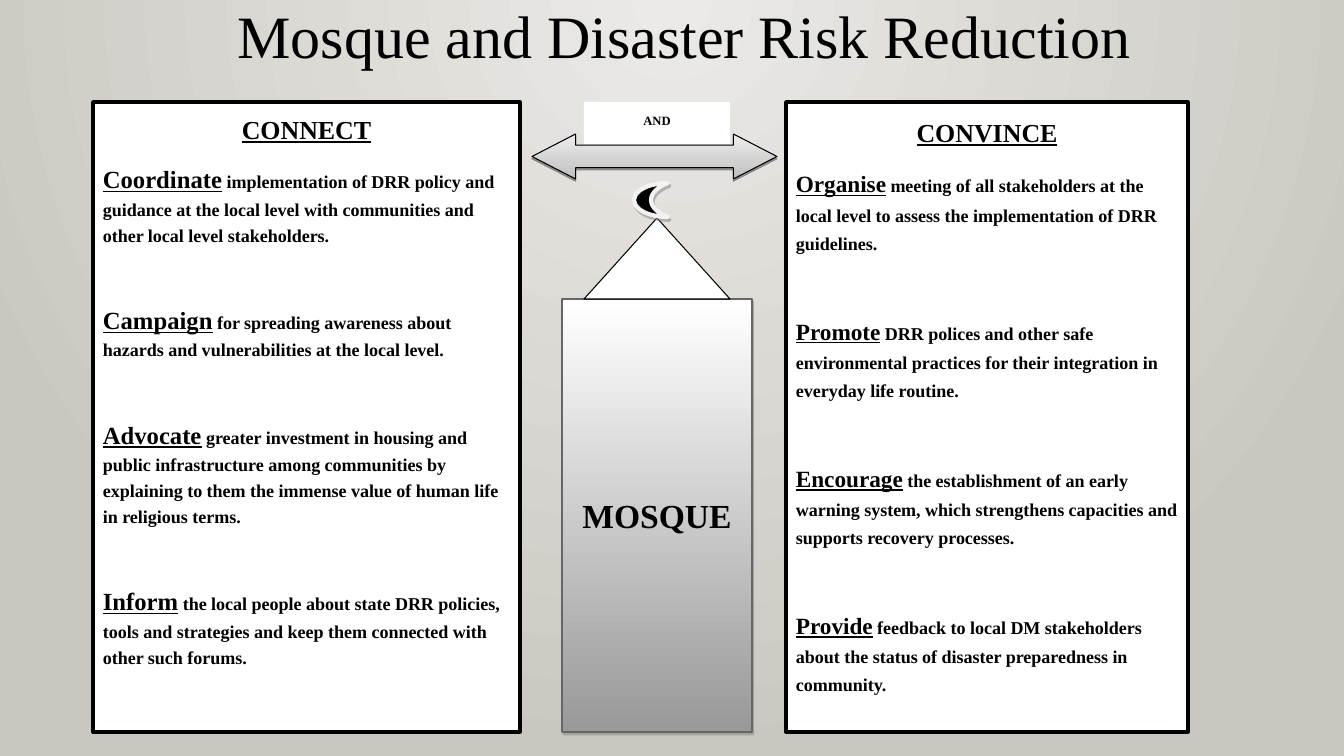
from dataclasses import dataclass
from lxml import etree
from pptx import Presentation
from pptx.dml.color import RGBColor
from pptx.enum.shapes import MSO_SHAPE as SHAPE
from pptx.enum.text import MSO_ANCHOR as ANCHOR, MSO_AUTO_SIZE as AUTO, PP_ALIGN as ALIGN
from pptx.oxml.ns import qn
from pptx.util import Pt

SCALE = 914400 / 100.8


@dataclass(frozen=True)
class Theme:
    font: str = "Times New Roman"
    ink: str = "000000"
    paper: str = "FFFFFF"
    backdrop: tuple = ((0, "ECEAE7"), (100, "CAC7C1"))
    tower: tuple = ((0, "FFFFFF"), (100, "999999"))
    arrow: tuple = ((0, "BCBCBC"), (35, "D0D0D0"), (100, "EDEDED"))
    tower_line: str = "666666"
    moon_line: str = "F2F2F2"
    soft_shadow: tuple = ("808080", 50, 2.2, 63)
    arrow_shadow: tuple = ("000000", 38, 1.6, 90)
    title: float = 42.9
    heading: float = 18.5
    body: float = 12.9
    label: float = 24
    small: float = 9


T = Theme()

CONNECT = [
    ("Coordinate", " implementation of DRR policy and guidance at the local level with communities and other local level stakeholders."),
    ("Campaign", " for spreading awareness about hazards and vulnerabilities at the local level."),
    ("Advocate", " greater investment in housing and public infrastructure among communities by explaining to them the immense value of human life in religious terms."),
    ("Inform", " the local people about state DRR policies, tools and strategies and keep them connected with other such forums."),
]
CONVINCE = [
    ("Organise", " meeting of all stakeholders at the local level to assess the implementation of DRR guidelines."),
    ("Promote", " DRR polices and other safe environmental practices for their integration in everyday life routine."),
    ("Encourage", " the establishment of an early warning system, which strengthens capacities and supports recovery processes."),
    ("Provide", " feedback to local DM stakeholders about the status of disaster preparedness in community."),
]


def px(n):
    return round(n * SCALE)


def rgb(color):
    return RGBColor.from_string(color)


def add_color(parent, color):
    return etree.SubElement(parent, qn("a:srgbClr"), val=color)


def set_gradient(fill, owner, stops, angle=None):
    fill.gradient()
    grad = owner.xpath(".//a:gradFill")[0]
    for child in list(grad):
        grad.remove(child)
    stop_list = etree.SubElement(grad, qn("a:gsLst"))
    for pos, color in stops:
        add_color(etree.SubElement(stop_list, qn("a:gs"), pos=str(pos * 1000)), color)
    if angle is None:
        focus = etree.SubElement(grad, qn("a:path"), path="circle")
        etree.SubElement(focus, qn("a:fillToRect"), l="43000", t="0", r="43000", b="100000")
    else:
        etree.SubElement(grad, qn("a:lin"), ang=str(angle * 60000), scaled="0")


def set_shadow(sp, color, alpha, distance, angle):
    effects = sp.element.spPr.find(qn("a:effectLst"))
    outer = etree.SubElement(effects, qn("a:outerShdw"), blurRad="0", dist=str(Pt(distance)),
                             dir=str(angle * 60000), algn="ctr", rotWithShape="0")
    etree.SubElement(add_color(outer, color), qn("a:alpha"), val=str(alpha * 1000))


def add_shape(s, kind, box, fill=T.paper, angle=90, line=None, width=0.75, shadow=None):
    sp = s.shapes.add_shape(kind, *map(px, box))
    sp.shadow.inherit = False
    if isinstance(fill, str):
        sp.fill.solid()
        sp.fill.fore_color.rgb = rgb(fill)
    else:
        set_gradient(sp.fill, sp.element, fill, angle)
    if line:
        sp.line.color.rgb = rgb(line)
        sp.line.width = Pt(width)
    else:
        sp.line.fill.background()
    if shadow:
        set_shadow(sp, *shadow)
    return sp


def add_text(p, text, size, bold=True, underline=False):
    r = p.add_run()
    r.text = text
    f = r.font
    f.name, f.size, f.bold, f.underline = T.font, Pt(size), bold, underline
    f.color.rgb = rgb(T.ink)


def format_paragraph(p, align=ALIGN.CENTER, spacing=1.0, after=0):
    p.alignment, p.line_spacing, p.space_after = align, spacing, Pt(after)


def set_frame(sp, anchor):
    tf = sp.text_frame
    tf.word_wrap, tf.auto_size, tf.vertical_anchor = True, AUTO.NONE, anchor
    return tf


def add_title(s, box, text):
    sp = s.shapes.title
    sp.left, sp.top, sp.width, sp.height = map(px, box)
    p = set_frame(sp, ANCHOR.MIDDLE).paragraphs[0]
    format_paragraph(p, spacing=0.9)
    add_text(p, text, T.title, bold=False)


def add_panel(s, box, heading, items, keyword, spacing, gap):
    sp = add_shape(s, SHAPE.RECTANGLE, box, line=T.ink, width=2.5)
    tf = set_frame(sp, ANCHOR.TOP)
    p = tf.paragraphs[0]
    format_paragraph(p, spacing=spacing, after=10)
    add_text(p, heading, T.heading, underline=True)
    for word, rest in items:
        p = tf.add_paragraph()
        format_paragraph(p, ALIGN.LEFT, spacing, gap)
        add_text(p, word, keyword, underline=True)
        add_text(p, rest, T.body)


def add_mosque(s, box):
    x, y, w, h = box
    mid = x + w // 2
    roof_x, roof_w, tower_w, tower_y = mid - 73, 146, 190, y + 197

    tower = add_shape(s, SHAPE.RECTANGLE, (mid - tower_w // 2, tower_y, tower_w, y + h - tower_y),
                      T.tower, line=T.tower_line, width=1, shadow=T.soft_shadow)
    p = set_frame(tower, ANCHOR.MIDDLE).paragraphs[0]
    format_paragraph(p)
    add_text(p, "MOSQUE", T.label)

    add_shape(s, SHAPE.ISOSCELES_TRIANGLE, (roof_x, tower_y - 81, roof_w, 81), line=T.ink)
    add_shape(s, SHAPE.MOON, (mid - 23, y + 81, 34, 34), T.ink,
              line=T.moon_line, width=3, shadow=T.soft_shadow)
    arrow = add_shape(s, SHAPE.LEFT_RIGHT_ARROW, (x, y + 32, w - 5, 45), T.arrow, 270,
                      line=T.ink, shadow=T.arrow_shadow)
    arrow.adjustments[0], arrow.adjustments[1] = 0.5, 0.97

    tag = add_shape(s, SHAPE.RECTANGLE, (roof_x, y, roof_w, 42))
    p = set_frame(tag, ANCHOR.TOP).paragraphs[0]
    format_paragraph(p, spacing=1.4)
    add_text(p, "AND", T.small)


def main():
    prs = Presentation()
    prs.slide_width, prs.slide_height = px(1344), px(756)
    s = prs.slides.add_slide(prs.slide_layouts[5])
    set_gradient(s.background.fill, s.shapes.element.getparent(), T.backdrop)
    add_title(s, (71, 0, 1226, 78), "Mosque and Disaster Risk Reduction")
    add_panel(s, (786, 102, 402, 630), "CONVINCE", CONVINCE, keyword=16.6, spacing=1.3, gap=39)
    add_panel(s, (93, 102, 427, 630), "CONNECT", CONNECT, keyword=17.6, spacing=1.2, gap=38)
    add_mosque(s, (532, 102, 250, 630))
    prs.save("out.pptx")


if __name__ == "__main__":
    main()
